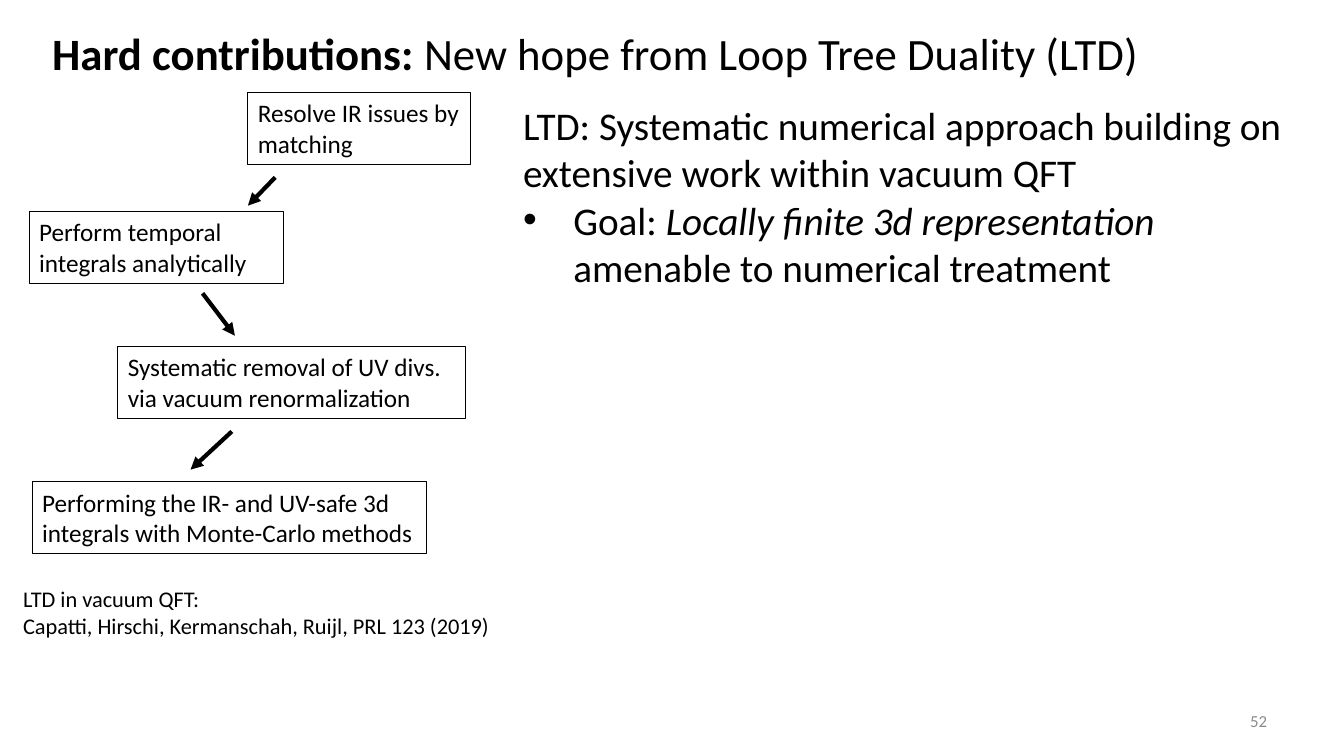
from typing import NamedTuple

from lxml import etree
from pptx import Presentation
from pptx.dml.color import RGBColor
from pptx.enum import shapes, text
from pptx.oxml import ns
from pptx.util import Pt

BLACK = RGBColor(0x00, 0x00, 0x00)
GRAY = RGBColor(0x8C, 0x8C, 0x8C)
FONT = "Calibri"
STEP_HEIGHT = 51.1


class Run(NamedTuple):
    words: str
    bold: bool = False
    italic: bool = False


class Para(NamedTuple):
    runs: list[Run]
    bullet: bool = False
    space_after: float = 0


class Label(NamedTuple):
    left: float
    top: float
    width: float
    height: float
    size: float
    paras: list[Para]
    color: RGBColor = BLACK
    align: text.PP_ALIGN = text.PP_ALIGN.LEFT
    anchor: text.MSO_ANCHOR = text.MSO_ANCHOR.TOP


class Step(NamedTuple):
    left: float
    top: float
    width: float
    words: str


class Arrow(NamedTuple):
    x1: float
    y1: float
    x2: float
    y2: float


STEPS = [
    Step(177.1, 66.2, 159, "Resolve IR issues by matching"),
    Step(20.9, 151.2, 181.4, "Perform temporal integrals analytically"),
    Step(84.2, 247.7, 248.4, "Systematic removal of UV divs. via vacuum renormalization"),
    Step(23, 344.2, 281.5, "Performing the IR- and UV-safe 3d integrals with Monte-Carlo methods"),
]

ARROWS = [
    Arrow(196.6, 126.7, 177.1, 146.9),
    Arrow(144.7, 209.5, 167.8, 239.8),
    Arrow(165.6, 308.2, 136.1, 335.5),
]

LABELS = [
    Label(30.2, 15.1, 915.1, 46.1, 32, [
        Para([Run("Hard contributions: ", bold=True),
              Run("New hope from Loop Tree Duality (LTD)")]),
    ]),
    Label(366.5, 69.1, 583.9, 143.3, 28, [
        Para([Run("LTD: Systematic numerical approach building on "
                  "extensive work within vacuum QFT")]),
        Para([Run("Goal: "),
              Run("Locally finite 3d representation", italic=True),
              Run(" amenable to numerical treatment")], bullet=True),
    ]),
    Label(9.4, 414.7, 357.1, 46.1, 16, [
        Para([Run("LTD in vacuum QFT:")]),
        Para([Run("Capatti, Hirschi, Kermanschah, Ruijl, PRL 123 (2019)")],
             space_after=12),
    ]),
    Label(688.3, 500.4, 223.9, 28.8, 12, [Para([Run("52")])], GRAY,
          text.PP_ALIGN.RIGHT, text.MSO_ANCHOR.MIDDLE),
]


def add_bullet(p) -> None:
    pPr = p._p.get_or_add_pPr()
    pPr.set("marL", str(Pt(36)))
    pPr.set("indent", str(Pt(-36)))
    etree.SubElement(pPr, ns.qn("a:buFont"), typeface="Arial")
    etree.SubElement(pPr, ns.qn("a:buChar"), char="•")


def write(s, label: Label) -> None:
    tf = s.text_frame
    tf.word_wrap = True
    tf.vertical_anchor = label.anchor
    for i, para in enumerate(label.paras):
        p = tf.add_paragraph() if i else tf.paragraphs[0]
        p.alignment = label.align
        if para.space_after:
            p.space_after = Pt(para.space_after)
        if para.bullet:
            add_bullet(p)
        for run in para.runs:
            r = p.add_run()
            r.text = run.words
            r.font.name = FONT
            r.font.size = Pt(label.size)
            r.font.color.rgb = label.color
            r.font.bold = run.bold
            r.font.italic = run.italic


def draw_label(slide, label: Label) -> None:
    s = slide.shapes.add_textbox(Pt(label.left), Pt(label.top),
                                 Pt(label.width), Pt(label.height))
    write(s, label)


def draw_step(slide, step: Step) -> None:
    s = slide.shapes.add_shape(shapes.MSO_SHAPE.RECTANGLE, Pt(step.left), Pt(step.top),
                               Pt(step.width), Pt(STEP_HEIGHT))
    s.shadow.inherit = False
    s.fill.background()
    s.line.color.rgb = BLACK
    s.line.width = Pt(0.75)
    write(s, Label(step.left, step.top, step.width, STEP_HEIGHT, 18,
                   [Para([Run(step.words)])]))


def draw_arrow(slide, arrow: Arrow) -> None:
    s = slide.shapes.add_connector(shapes.MSO_CONNECTOR.STRAIGHT, Pt(arrow.x1), Pt(arrow.y1),
                                   Pt(arrow.x2), Pt(arrow.y2))
    s.line.color.rgb = BLACK
    s.line.width = Pt(3)
    etree.SubElement(s.line._get_or_add_ln(), ns.qn("a:tailEnd"), type="triangle")
    etree.SubElement(s._element.spPr, ns.qn("a:effectLst"))


def main() -> None:
    prs = Presentation()
    prs.slide_width, prs.slide_height = Pt(960), Pt(540)
    slide = prs.slides.add_slide(prs.slide_layouts[6])
    for step in STEPS:
        draw_step(slide, step)
    for arrow in ARROWS:
        draw_arrow(slide, arrow)
    for label in LABELS:
        draw_label(slide, label)
    prs.save("out.pptx")


if __name__ == "__main__":
    main()
